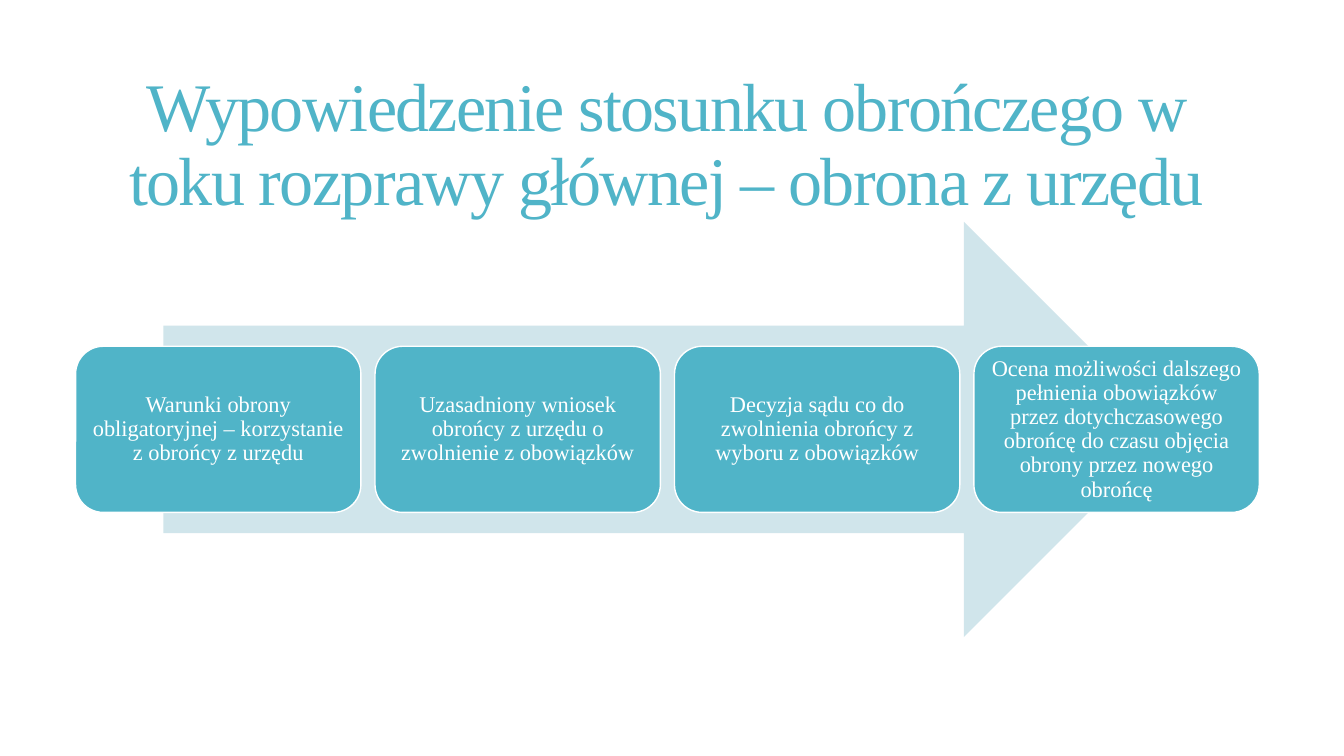
from pptx import Presentation
from pptx.dml.color import RGBColor
from pptx.enum import shapes, text
from pptx.util import Inches, Pt

TITLE = "Wypowiedzenie stosunku obrończego w toku rozprawy głównej – obrona z urzędu"
STEPS = [
    "Warunki obrony obligatoryjnej – korzystanie z obrońcy z urzędu",
    "Uzasadniony wniosek obrońcy z urzędu o zwolnienie z obowiązków",
    "Decyzja sądu co do zwolnienia obrońcy z wyboru z obowiązków",
    "Ocena możliwości dalszego pełnienia obowiązków przez dotychczasowego "
    "obrońcę do czasu objęcia obrony przez nowego obrońcę",
]
COLORS = {"teal": "50B4C8", "pale": "D0E5EB", "white": "FFFFFF"}
FONT = "Times New Roman"
WIDE, HIGH = 13.33, 7.5
ARROW = (1.62, 2.2, 10, 4.12)
LEFT, STEP_W, GAP = 0.75, 2.83, 0.14
STEP_H = ARROW[3] * 0.4
TOP = ARROW[1] + (ARROW[3] - STEP_H) / 2


def color(name):
    return RGBColor.from_string(COLORS[name])


def write(frame, words, size, tone, spacing):
    frame.text = words
    frame.word_wrap = True
    frame.auto_size = text.MSO_AUTO_SIZE.NONE
    frame.vertical_anchor = text.MSO_ANCHOR.MIDDLE
    para = frame.paragraphs[0]
    para.alignment = text.PP_ALIGN.CENTER
    para.line_spacing = spacing
    font = para.runs[0].font
    font.name, font.size = FONT, Pt(size)
    font.color.rgb = color(tone)
    return para.runs[0]


def add_block(slide, kind, box, fill):
    block = slide.shapes.add_shape(kind, *map(Inches, box))
    block.shadow.inherit = False
    block.fill.solid()
    block.fill.fore_color.rgb = color(fill)
    block.line.fill.background()
    return block


def add_step(slide, col, words):
    box = (LEFT + col * (STEP_W + GAP), TOP, STEP_W, STEP_H)
    step = add_block(slide, shapes.MSO_SHAPE.ROUNDED_RECTANGLE, box, "teal")
    step.line.color.rgb = color("white")
    step.line.width = Pt(1)
    frame = step.text_frame
    frame.margin_left = frame.margin_right = Inches(0.07)
    frame.margin_top = frame.margin_bottom = Inches(0.07)
    write(frame, words, 16, "white", 0.9)


def main():
    deck = Presentation()
    deck.slide_width, deck.slide_height = Inches(WIDE), Inches(HIGH)
    slide = deck.slides.add_slide(deck.slide_layouts[5])

    title = slide.shapes.title
    title.left, title.top = Inches(0.72), Inches(0.55)
    title.width, title.height = Inches(11.78), Inches(1.81)
    run = write(title.text_frame, TITLE, 48.6, "teal", 0.9)
    run.font._element.set("spc", "-120")

    add_block(slide, shapes.MSO_SHAPE.RIGHT_ARROW, ARROW, "pale")
    for col, words in enumerate(STEPS):
        add_step(slide, col, words)
    deck.save("out.pptx")


if __name__ == "__main__":
    main()
